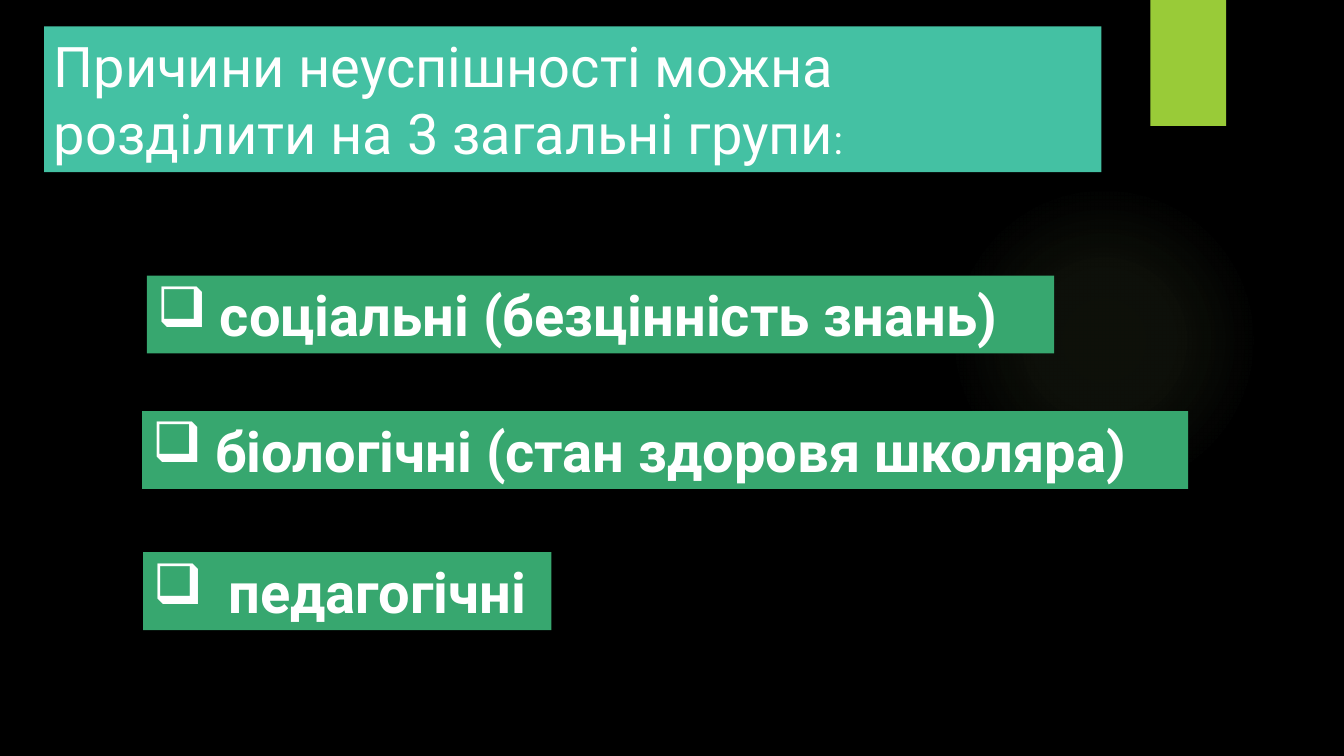
from typing import NamedTuple

from lxml.etree import SubElement
from pptx import Presentation
from pptx.dml.color import RGBColor
from pptx.enum.shapes import MSO_SHAPE
from pptx.enum.text import MSO_AUTO_SIZE
from pptx.oxml import parse_xml
from pptx.oxml.ns import nsdecls, qn
from pptx.shapes.autoshape import Shape
from pptx.slide import Slide
from pptx.util import Pt

COLOURS = {
    "background": "000000",
    "glow": "C2E088",
    "tab": "99CB38",
    "title": "44C1A3",
    "cause": "37A76F",
    "text": "FFFFFF",
}
FONT = "Roboto"
TEXT_SIZE = 40
COLON_SIZE = 28
CAUSE_HEIGHT = 55.7
GLOW_STOPS = ((0, 7), (36, 6), (69, 0))  # position and opacity, in percent


class Cause(NamedTuple):
    text: str
    left: float
    top: float
    width: float
    indent: float


CAUSES = (
    Cause("соціальні (безцінність знань)", 105, 196.8, 648, 45),
    Cause("біологічні (стан здоровя школяра)", 101.6, 293.6, 747.2, 45),
    Cause("педагогічні", 102.2, 394.4, 291.8, 54),
)


def colour(name: str) -> RGBColor:
    return RGBColor.from_string(COLOURS[name])


def add_plain_shape(page: Slide, kind: MSO_SHAPE, left: float, top: float,
                    width: float, height: float) -> Shape:
    shape = page.shapes.add_shape(kind, Pt(left), Pt(top), Pt(width), Pt(height))
    shape.shadow.inherit = False
    shape.line.fill.background()
    return shape


def add_glow(page: Slide) -> None:
    glow = add_plain_shape(page, MSO_SHAPE.OVAL, 677.5, 131.8, 221.8, 221.8)
    stops = "".join(
        f'<a:gs pos="{position * 1000}"><a:srgbClr val="{COLOURS["glow"]}">'
        f'<a:alpha val="{opacity * 1000}"/></a:srgbClr></a:gs>'
        for position, opacity in GLOW_STOPS
    )
    gradient = parse_xml(
        f'<a:gradFill {nsdecls("a")}><a:gsLst>{stops}</a:gsLst><a:path path="circle">'
        '<a:fillToRect l="50000" t="50000" r="50000" b="50000"/></a:path></a:gradFill>'
    )
    glow.element.spPr.find(qn("a:prstGeom")).addnext(gradient)


def add_label(page: Slide, fill: str, left: float, top: float,
              width: float, height: float, wrap: bool) -> Shape:
    box = page.shapes.add_textbox(Pt(left), Pt(top), Pt(width), Pt(height))
    box.fill.solid()
    box.fill.fore_color.rgb = colour(fill)
    box.text_frame.word_wrap = wrap
    box.text_frame.auto_size = MSO_AUTO_SIZE.SHAPE_TO_FIT_TEXT
    return box


def format_text(box: Shape, bold: bool) -> None:
    for span in box.text_frame.paragraphs[0].runs:
        span.font.name = FONT
        span.font.size = Pt(TEXT_SIZE)
        span.font.bold = bold
        span.font.color.rgb = colour("text")


def add_title(page: Slide) -> None:
    box = add_label(page, "title", 31.5, 18.8, 755.2, 104.2, True)
    para = box.text_frame.paragraphs[0]
    para.text = "Причини неуспішності можна розділити на 3 загальні групи"
    colon = para.add_run()
    colon.text = ":"
    format_text(box, False)
    colon.font.size = Pt(COLON_SIZE)


def add_cause(page: Slide, cause: Cause) -> None:
    box = add_label(page, "cause", cause.left, cause.top, cause.width, CAUSE_HEIGHT, False)
    para = box.text_frame.paragraphs[0]
    para.text = cause.text
    properties = para._p.get_or_add_pPr()
    properties.set("marL", str(Pt(cause.indent)))
    properties.set("indent", str(-Pt(cause.indent)))
    SubElement(properties, qn("a:buChar")).set("char", "❑")
    format_text(box, True)


def main() -> None:
    deck = Presentation()
    deck.slide_width, deck.slide_height = Pt(960), Pt(540)
    page = deck.slides.add_slide(deck.slide_layouts[6])
    page.background.fill.solid()
    page.background.fill.fore_color.rgb = colour("background")

    # Decoration
    add_glow(page)
    tab = add_plain_shape(page, MSO_SHAPE.RECTANGLE, 821.8, 0, 54, 90)
    tab.fill.solid()
    tab.fill.fore_color.rgb = colour("tab")

    # Title and the three groups of causes
    add_title(page)
    for cause in CAUSES:
        add_cause(page, cause)

    deck.save("out.pptx")


if __name__ == "__main__":
    main()
